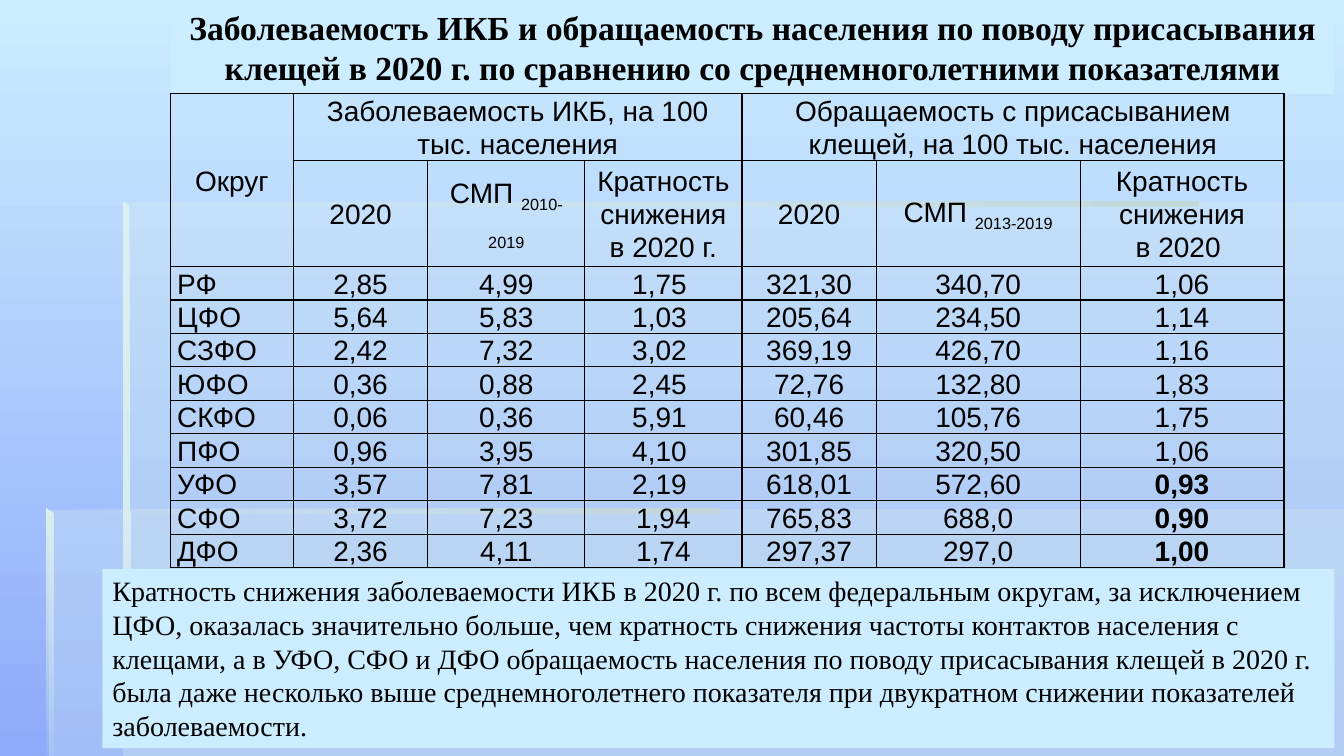
from pptx import Presentation
from pptx.dml.color import RGBColor as Rgb
from pptx.enum.text import MSO_ANCHOR as Anchor, MSO_AUTO_SIZE as Fit, PP_ALIGN as Align
from pptx.oxml.ns import qn
from pptx.util import Pt
from lxml.etree import SubElement as Sub

HEX = {"ink": "000000", "sky": "CCECFF", "blue": "8EAAFA", "pale": "D6EDEE",
       "edge": "C4D9DA", "glow": "DCEFF0"}
DOWN, RIGHT = 270, 0
SERIF, SANS = "Times New Roman", "Arial"

TITLE = ("Заболеваемость ИКБ и обращаемость населения по поводу присасывания "
         "клещей в 2020 г. по сравнению со среднемноголетними показателями")
NOTE = ("Кратность снижения заболеваемости ИКБ в 2020 г. по всем федеральным округам, "
        "за исключением ЦФО, оказалась значительно больше, чем кратность снижения частоты "
        "контактов населения с клещами, а в УФО, СФО и ДФО обращаемость населения по поводу "
        "присасывания клещей в 2020 г. была даже несколько выше среднемноголетнего показателя "
        "при двукратном снижении показателей заболеваемости.")

# Each header cell: row, column, last row, last column, paragraphs of (text, is_sub) runs
HEADS = [
    (0, 0, 1, 0, [[("Округ", False)]]),
    (0, 1, 0, 3, [[("Заболеваемость ИКБ, на 100 тыс. населения", False)]]),
    (0, 4, 0, 6, [[("Обращаемость с присасыванием клещей, на 100 тыс. населения", False)]]),
    (1, 1, 1, 1, [[("2020", False)]]),
    (1, 2, 1, 2, [[("СМП ", False), ("2010-2019", True)]]),
    (1, 3, 1, 3, [[("Кратность снижения в 2020 г.", False)]]),
    (1, 4, 1, 4, [[("2020", False)]]),
    (1, 5, 1, 5, [[("СМП ", False), ("2013-2019", True)]]),
    (1, 6, 1, 6, [[("Кратность снижения", False)], [("в 2020 ", False)]]),
]
DATA = [
    "РФ|2,85|4,99|1,75 |321,30|340,70|1,06",
    "ЦФО|5,64|5,83|1,03 |205,64|234,50|1,14",
    "СЗФО|2,42|7,32|3,02 |369,19|426,70|1,16",
    "ЮФО|0,36|0,88|2,45 |72,76|132,80|1,83",
    "СКФО|0,06|0,36|5,91 |60,46|105,76|1,75",
    "ПФО|0,96|3,95|4,10 |301,85|320,50|1,06",
    "УФО|3,57|7,81|2,19 |618,01|572,60|0,93",
    "СФО|3,72|7,23|1,94|765,83|688,0|0,90",
    "ДФО|2,36|4,11|1,74|297,37|297,0|1,00",
]
BOLD = {"УФО", "СФО", "ДФО"}
COLS = [88, 96, 112.2, 112.2, 96, 145.6, 145.6]
ROWS = [45.4, 75.6] + [21.6] * len(DATA)

# Points of each glass panel, then its stops of (colour, alpha %) and its angle
PANELS = [
    ([(88, 363.6), (88, 540), (960, 540), (960, 363.6)], [("pale", 30)], None),
    ([(90, 364), (35, 364), (35, 540), (960, 540), (960, 144), (90, 144)],
     [("pale", 30)], None),
    ([(88, 144), (88, 147.5), (856, 147.5), (856, 144)],
     [("pale", 0), ("edge", 100)], RIGHT),
    ([(88, 144), (88, 367), (93, 367), (92.5, 147), (88, 144)],
     [("glow", 100), ("pale", 100)], DOWN),
    ([(88, 540), (93, 540), (92.5, 366), (88, 363)],
     [("glow", 100), ("pale", 0)], DOWN),
    ([(33.5, 363), (33.5, 366.5), (513, 366.5), (513, 363)],
     [("pale", 0), ("edge", 100)], RIGHT),
    ([(33.5, 363), (33.5, 540), (38.5, 540), (38.5, 366.5)],
     [("glow", 100), ("pale", 10)], DOWN),
]


def rgb(key):
    return Rgb.from_string(HEX[key])


def blend(fill, keys, angle):
    fill.gradient()
    fill.gradient_angle = angle
    for stop, key in zip(fill.gradient_stops, keys):
        stop.color.rgb = rgb(key)


def add_panel(shapes, points, stops, angle):
    start, *rest = [(Pt(x), Pt(y)) for x, y in points]
    pen = shapes.build_freeform(*start, scale=1.0)
    pen.add_line_segments(rest, close=True)
    panel = pen.convert_to_shape()
    panel.shadow.inherit = False
    panel.line.fill.background()
    if angle is None:
        panel.fill.solid()
        panel.fill.fore_color.rgb = rgb(stops[0][0])
    else:
        blend(panel.fill, [key for key, _ in stops], angle)
    tints = panel._element.spPr.iter(qn("a:srgbClr"))
    for tint, (_, alpha) in zip(list(tints), stops):
        if alpha < 100:
            Sub(tint, qn("a:alpha")).set("val", str(alpha * 1000))


def add_run(para, text, size, face, bold=False, sub=False):
    run = para.add_run()
    run.text = text
    font = run.font
    font.size, font.name, font.bold = Pt(size), face, bold
    font.color.rgb = rgb("ink")
    if sub:
        run._r.get_or_add_rPr().set("baseline", "-25000")


def fill_box(box, text, size, align, bold=False):
    box.fill.solid()
    box.fill.fore_color.rgb = rgb("sky")
    frame = box.text_frame
    frame.word_wrap = True
    para = frame.paragraphs[0]
    para.alignment = align
    add_run(para, text, size, SERIF, bold)
    return frame


def add_title(slide):
    title = slide.shapes.title
    title.left, title.top, title.width, title.height = Pt(122), Pt(0), Pt(831), Pt(67)
    frame = fill_box(title, TITLE, 24, Align.CENTER, True)
    frame.auto_size, frame.vertical_anchor = Fit.NONE, Anchor.MIDDLE
    slide.shapes._spTree.append(title._element)


def frame_cell(cell):
    """Set thin dark borders, tight margins and no fill."""
    props = cell._tc.get_or_add_tcPr()
    for side in ("a:lnL", "a:lnR", "a:lnT", "a:lnB"):
        line = Sub(props, qn(side), w=str(Pt(1)))
        Sub(Sub(line, qn("a:solidFill")), qn("a:srgbClr"), val=HEX["ink"])
    cell.fill.background()
    cell.margin_left = cell.margin_right = Pt(5)
    cell.margin_top = cell.margin_bottom = Pt(0)


def fill_cell(cell, paras, align=Align.CENTER, anchor=Anchor.MIDDLE, bold=False):
    cell.vertical_anchor = anchor
    frame = cell.text_frame
    for i, runs in enumerate(paras):
        para = frame.add_paragraph() if i else frame.paragraphs[0]
        para.alignment, para.line_spacing = align, 1.07
        for text, sub in runs:
            add_run(para, text, 20, SANS, bold, sub)


def add_grid(shapes):
    table = shapes.add_table(len(ROWS), len(COLS), Pt(121.6), Pt(67),
                             Pt(sum(COLS)), Pt(sum(ROWS))).table
    table.first_row = table.horz_banding = False
    for col, width in zip(table.columns, COLS):
        col.width = Pt(width)
    for row, height in zip(table.rows, ROWS):
        row.height = Pt(height)
    for cell in table.iter_cells():
        frame_cell(cell)
    for top, left, low, right, paras in HEADS:
        cell = table.cell(top, left)
        if (top, left) != (low, right):
            cell.merge(table.cell(low, right))
        fill_cell(cell, paras)
    for r, line in enumerate(DATA, 2):
        name, *vals = line.split("|")
        fill_cell(table.cell(r, 0), [[(name, False)]], Align.LEFT, Anchor.TOP)
        for c, val in enumerate(vals, 1):
            bold = name in BOLD and c == len(vals)
            fill_cell(table.cell(r, c), [[(val, False)]], bold=bold)


def add_note(shapes):
    box = shapes.add_textbox(Pt(73.2), Pt(406.4), Pt(880), Pt(128))
    frame = fill_box(box, NOTE, 20, Align.LEFT)
    frame.auto_size = Fit.SHAPE_TO_FIT_TEXT


def main():
    deck = Presentation()
    deck.slide_width, deck.slide_height = Pt(960), Pt(540)
    slide = deck.slides.add_slide(deck.slide_layouts[5])
    blend(slide.background.fill, ["sky", "blue"], DOWN)
    for panel in PANELS:
        add_panel(slide.shapes, *panel)
    add_title(slide)
    add_grid(slide.shapes)
    add_note(slide.shapes)
    deck.save("out.pptx")


if __name__ == "__main__":
    main()
